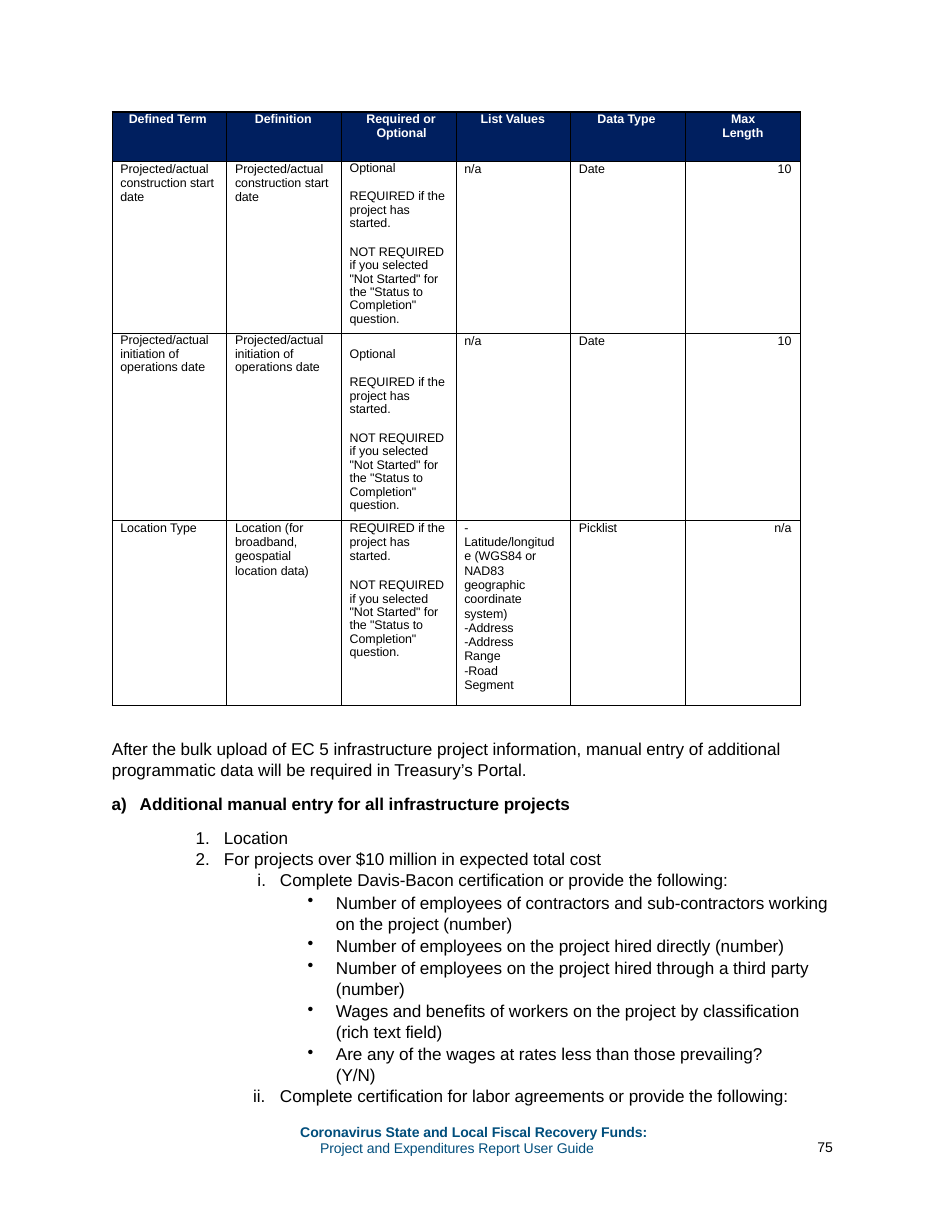
from lxml.etree import SubElement
from pptx import Presentation
from pptx.dml.color import RGBColor
from pptx.enum.text import PP_ALIGN
from pptx.oxml.ns import qn
from pptx.util import Cm, Pt

NAVY = RGBColor(0x00, 0x1F, 0x5F)
BLUE = RGBColor(0x00, 0x4E, 0x7C)
WHITE = RGBColor(0xFF, 0xFF, 0xFF)
BLACK = RGBColor(0x00, 0x00, 0x00)

COLUMN_WIDTH = 2.6
ROW_HEIGHTS = [1.12, 3.91, 4.24, 4.19]
CELL_PAD = 0.19
EXACT = Pt(9.2)
TIGHT = 0.96

# Text, left indent and first-line indent
HEADERS = [
    ("Defined Term", 0.38, 0),
    ("Definition", 0.64, 0),
    ("Required or\vOptional", 0.8, -0.23),
    ("List Values", 0.56, 0),
    ("Data Type", 0.61, 0),
    ("Max\vLength", 0.84, 0.2),
]

IF_STARTED = "REQUIRED if the\vproject has\vstarted."
NOT_REQUIRED = [
    ("NOT REQUIRED", {"line": Pt(9.4), "before": 9}),
    ('if you selected\v"Not Started" for\vthe "Status to\vCompletion"\vquestion.',
     {"line": TIGHT}),
]
OPTIONAL = [("Optional", {}), (IF_STARTED, {"line": TIGHT, "before": 9.3})] + NOT_REQUIRED
START_DATE = [("Projected/actual\vconstruction start\vdate", {"line": EXACT})]
OPERATIONS_DATE = [("Projected/actual\vinitiation of\voperations date", {"line": TIGHT})]
LOCATION_VALUES = [
    (text, {"line": EXACT}) for text in (
        "-",
        "Latitude/longitud\ve (WGS84 or\vNAD83",
        "geographic\vcoordinate\vsystem)",
        "-Address",
        "-Address\vRange",
        "-Road\vSegment",
    )
]


def plain(text):
    return [(text, {"line": Pt(9.3)})]


BODY_ROWS = [
    [START_DATE, START_DATE, OPTIONAL, plain("n/a"), plain("Date"), plain("10")],
    [OPERATIONS_DATE, OPERATIONS_DATE, OPTIONAL, plain("n/a"), plain("Date"), plain("10")],
    [plain("Location Type"),
     [("Location (for\vbroadband,\vgeospatial\vlocation data)", {"line": EXACT})],
     [(IF_STARTED, {"line": EXACT})] + NOT_REQUIRED,
     LOCATION_VALUES, plain("Picklist"), plain("n/a")],
]

NUMBER = {"left": 2.57, "first": -0.64, "number": "arabicPeriod", "level": 1}
ROMAN = {"left": 3.84, "first": -0.51, "number": "romanLcPeriod", "level": 2, "before": 0.5}
BULLET = {"left": 5.11, "first": -0.64, "bullet": "•", "level": 3, "line": 1.03, "before": 0.8}

BODY_TEXT = [
    ("After the bulk upload of EC 5 infrastructure project information, manual entry of "
     "additional programmatic data will be required in Treasury’s Portal.",
     {"left": 0.03, "line": 1.03}),
    ("Additional manual entry for all infrastructure projects",
     {"left": 0.66, "first": -0.64, "number": "alphaLcParenR", "bold": True, "before": 8.4}),
    ("Location", NUMBER | {"before": 8.4}),
    ("For projects over $10 million in expected total cost", NUMBER | {"before": 0.5}),
    ("Complete Davis-Bacon certification or provide the following:", ROMAN),
    ("Number of employees of contractors and sub-contractors working on the project (number)",
     BULLET),
    ("Number of employees on the project hired directly (number)", BULLET | {"line": 1.0}),
    ("Number of employees on the project hired through a third party (number)", BULLET),
    ("Wages and benefits of workers on the project by classification (rich text field)", BULLET),
    ("Are any of the wages at rates less than those prevailing?\v(Y/N)", BULLET | {"line": 1.0}),
    ("Complete certification for labor agreements or provide the following:",
     ROMAN | {"first": -0.61}),
]


def write_text(paragraph, text, size=8, color=BLACK, bold=False, line=None, before=0,
               left=0, first=0, align=None, level=0, number=None, bullet=None):
    """Fill one paragraph; a vertical tab in the text is a line break."""
    paragraph.text = text
    paragraph.level = level
    paragraph.alignment = align
    paragraph.space_before = Pt(before)
    if line:
        paragraph.line_spacing = line
    properties = paragraph._p.get_or_add_pPr()
    properties.set("marL", str(Cm(left)))
    properties.set("indent", str(Cm(first)))
    if number:
        SubElement(properties, qn("a:buAutoNum"), type=number)
    elif bullet:
        SubElement(properties, qn("a:buChar"), char=bullet)
    else:
        SubElement(properties, qn("a:buNone"))
    for run in paragraph.runs:
        run.font.name = "Arial"
        run.font.size = Pt(size)
        run.font.bold = bold
        run.font.color.rgb = color
        run._r.get_or_add_rPr().set("spc", "-5")
    for line_break in paragraph._p.findall(qn("a:br")):
        SubElement(line_break, qn("a:rPr"), sz=str(size * 100))


def write_paragraphs(frame, paragraphs, **shared):
    for index, (text, options) in enumerate(paragraphs):
        paragraph = frame.add_paragraph() if index else frame.paragraphs[0]
        write_text(paragraph, text, **(shared | options))


def add_text_box(slide, left, top, width, height, paragraphs, **shared):
    frame = slide.shapes.add_textbox(Cm(left), Cm(top), Cm(width), Cm(height)).text_frame
    frame.margin_left = frame.margin_right = frame.margin_top = frame.margin_bottom = 0
    frame.word_wrap = True
    write_paragraphs(frame, paragraphs, **shared)


def set_borders(cell, top, bottom):
    properties = cell._tc.get_or_add_tcPr()
    for side, width in (("L", 0.5), ("R", 0.5), ("T", top), ("B", bottom)):
        border = SubElement(properties, qn(f"a:ln{side}"), w=str(Pt(width)))
        fill = SubElement(border, qn("a:solidFill"))
        SubElement(fill, qn("a:srgbClr"), val=str(BLACK))


def add_terms_table(slide):
    rows, columns = len(ROW_HEIGHTS), len(HEADERS)
    table = slide.shapes.add_table(rows, columns, Cm(2.54), Cm(2.54),
                                   Cm(columns * COLUMN_WIDTH), Cm(sum(ROW_HEIGHTS))).table
    table.first_row = table.horz_banding = False
    for column in table.columns:
        column.width = Cm(COLUMN_WIDTH)
    for row, height in zip(table.rows, ROW_HEIGHTS):
        row.height = Cm(height)
        for cell in row.cells:
            cell.margin_left = cell.margin_right = cell.margin_top = cell.margin_bottom = 0

    for cell, (text, left, first) in zip(table.rows[0].cells, HEADERS):
        set_borders(cell, 1, 1)
        cell.fill.solid()
        cell.fill.fore_color.rgb = NAVY
        write_text(cell.text_frame.paragraphs[0], text, color=WHITE, bold=True,
                   line=EXACT, left=left, first=first)

    for row_index, contents in enumerate(BODY_ROWS, start=1):
        for column, paragraphs in enumerate(contents):
            cell = table.cell(row_index, column)
            set_borders(cell, 1 if row_index == 1 else 0.5, 0.5)
            cell.fill.background()
            if column == columns - 1:
                cell.margin_right = Cm(CELL_PAD)
                write_paragraphs(cell.text_frame, paragraphs, align=PP_ALIGN.RIGHT)
            else:
                write_paragraphs(cell.text_frame, paragraphs, left=CELL_PAD)
    table.cell(2, 2).margin_top = Cm(0.31)


def add_footer(slide):
    add_text_box(slide, 6.78, 25.48, 8.3, 0.79, [
        ("Coronavirus State and Local Fiscal Recovery Funds:", {"left": 0.03, "bold": True}),
        ("Project and Expenditures Report User Guide", {"left": 0.48}),
    ], size=9, color=BLUE, line=Pt(10.6))
    add_text_box(slide, 18.44, 25.83, 0.56, 0.43, [("75", {"left": 0.1})], size=9)


def main():
    presentation = Presentation()
    presentation.slide_width = Cm(21.59)
    presentation.slide_height = Cm(27.94)
    slide = presentation.slides.add_slide(presentation.slide_layouts[6])
    add_terms_table(slide)
    add_text_box(slide, 2.51, 16.74, 16.38, 7.98, BODY_TEXT, size=11)
    add_footer(slide)
    presentation.save("out.pptx")


if __name__ == "__main__":
    main()
